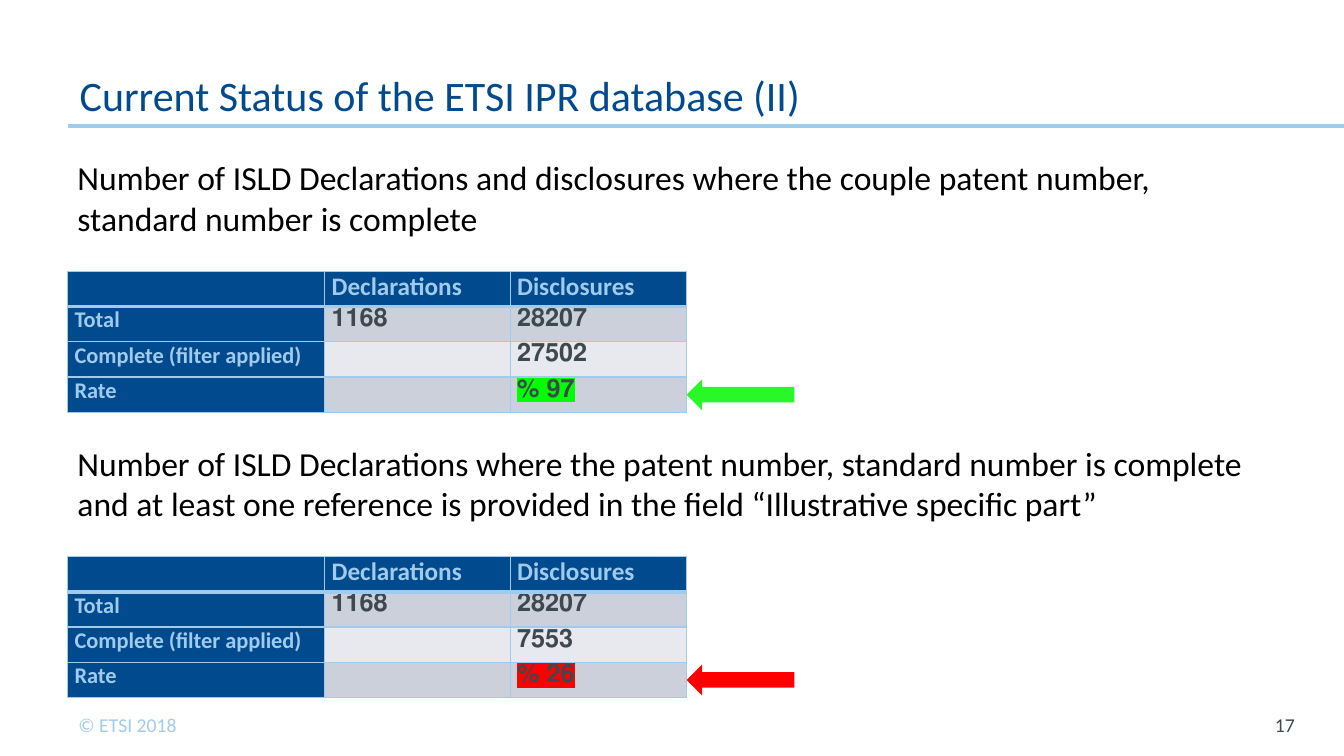
"""Build the slide on the current status of the ETSI IPR database."""
import dataclasses

import lxml.etree
import pptx
import pptx.dml.color
import pptx.enum.shapes
import pptx.enum.text
import pptx.oxml.ns
import pptx.util

Inches = pptx.util.Inches
Align = pptx.enum.text.PP_ALIGN
Anchor = pptx.enum.text.MSO_ANCHOR


@dataclasses.dataclass(frozen=True)
class Theme:
    """Colours, typeface and type sizes of the slide."""
    font: str = "Calibri"
    navy: str = "004A8D"
    sky: str = "A0CBED"
    slate: str = "3E484F"
    black: str = "000000"
    bands: tuple = ("CCD0DB", "E7E9EE")
    green_mark: str = "00FF00"
    green_arrow: str = "28F828"
    red: str = "FF0000"
    title_size: int = 30
    body_size: int = 24
    cell_size: int = 18
    label_size: int = 16
    footer_size: int = 14


def rgb(colour):
    """Turn a hex string into a colour."""
    return pptx.dml.color.RGBColor.from_string(colour)


def add_colour(parent, tag, colour):
    """Append an element that holds a colour."""
    holder = lxml.etree.SubElement(parent, pptx.oxml.ns.qn(tag))
    lxml.etree.SubElement(holder, pptx.oxml.ns.qn("a:srgbClr"), val=colour)


class SlideBuilder:
    """Draw styled elements on one slide."""

    def __init__(self, presentation, theme):
        """Add a title-only slide."""
        self.theme = theme
        self.slide = presentation.slides.add_slide(presentation.slide_layouts[5])

    def style(self, paragraph, size, colour, bold=False):
        """Set the font of a paragraph."""
        font = paragraph.font
        font.name, font.size, font.bold = self.theme.font, pptx.util.Pt(size), bold
        font.color.rgb = rgb(colour)

    def title(self, text, left, top, width, height):
        """Place and fill the title."""
        title = self.slide.shapes.title
        title.left, title.top = Inches(left), Inches(top)
        title.width, title.height = Inches(width), Inches(height)
        frame = title.text_frame
        frame.text = text
        frame.auto_size = pptx.enum.text.MSO_AUTO_SIZE.NONE
        frame.vertical_anchor = Anchor.BOTTOM
        frame.margin_left = frame.margin_right = Inches(0.12)
        frame.margin_top = frame.margin_bottom = Inches(0.06)
        paragraph = frame.paragraphs[0]
        paragraph.alignment = Align.LEFT
        paragraph.line_spacing = pptx.util.Pt(self.theme.title_size)
        self.style(paragraph, self.theme.title_size, self.theme.navy)

    def text(self, text, left, top, width, height, size, colour,
             align=Align.LEFT, anchor=Anchor.TOP):
        """Add a text box with one paragraph per line of text."""
        box = self.slide.shapes.add_textbox(
            Inches(left), Inches(top), Inches(width), Inches(height))
        frame = box.text_frame
        frame.word_wrap = True
        frame.vertical_anchor = anchor
        frame.text = text
        for paragraph in frame.paragraphs:
            paragraph.alignment = align
            self.style(paragraph, size, colour)

    def rule(self, left, right, top):
        """Add the horizontal line under the title."""
        line = self.slide.shapes.add_connector(
            pptx.enum.shapes.MSO_CONNECTOR.STRAIGHT,
            Inches(left), Inches(top), Inches(right), Inches(top))
        line.line.color.rgb = rgb(self.theme.sky)
        line.line.width = pptx.util.Pt(2.25)
        lxml.etree.SubElement(line._element.spPr, pptx.oxml.ns.qn("a:effectLst"))

    def arrow(self, left, top, width, height, colour):
        """Add an arrow that points left."""
        arrow = self.slide.shapes.add_shape(
            pptx.enum.shapes.MSO_SHAPE.RIGHT_ARROW,
            Inches(left), Inches(top), Inches(width), Inches(height))
        arrow.rotation = 180
        arrow.shadow.inherit = False
        arrow.fill.solid()
        arrow.fill.fore_color.rgb = rgb(colour)
        arrow.line.fill.background()

    def borders(self, cell, row):
        """Draw the cell borders, thick below the header row."""
        properties = cell._tc.get_or_add_tcPr()
        thick_side = {0: "B", 1: "T"}.get(row)
        for side in "LRTB":
            width = pptx.util.Pt(3 if side == thick_side else 1)
            line = lxml.etree.SubElement(
                properties, pptx.oxml.ns.qn(f"a:ln{side}"), w=str(int(width)))
            add_colour(line, "a:solidFill", self.theme.sky)

    def table(self, rows, left, top, widths, row_height, mark):
        """Add a table and highlight its last value."""
        theme = self.theme
        table = self.slide.shapes.add_table(
            len(rows), len(widths), Inches(left), Inches(top),
            Inches(sum(widths)), Inches(row_height * len(rows))).table
        for column, width in zip(table.columns, widths):
            column.width = Inches(width)
        for row, values in enumerate(rows):
            table.rows[row].height = Inches(row_height)
            for column, value in enumerate(values):
                cell = table.cell(row, column)
                heading = row == 0 or column == 0
                self.borders(cell, row)
                cell.fill.solid()
                cell.fill.fore_color.rgb = rgb(
                    theme.navy if heading else theme.bands[(row - 1) % 2])
                cell.margin_left = cell.margin_right = Inches(0.07)
                cell.margin_top = cell.margin_bottom = 0
                cell.text = value
                paragraph = cell.text_frame.paragraphs[0]
                paragraph.alignment = Align.LEFT
                if not heading:
                    paragraph._p.get_or_add_pPr().set("rtl", "1")
                label = column == 0 and row > 0
                self.style(paragraph, theme.label_size if label else theme.cell_size,
                           theme.sky if heading else theme.slate, bold=True)
        add_colour(paragraph.runs[0]._r.get_or_add_rPr(), "a:highlight", mark)


def main():
    """Build and save the presentation."""
    theme = Theme()
    presentation = pptx.Presentation()
    presentation.slide_width, presentation.slide_height = Inches(13.33), Inches(7.5)
    builder = SlideBuilder(presentation, theme)
    left = 0.67
    widths = (2.55, 1.84, 1.75)

    builder.rule(left, 13.33, 1.25)
    builder.text("© ETSI 2018", 0.68, 7.02, 1.34, 0.34, theme.footer_size, theme.sky)
    builder.text("17", 12.25, 6.99, 0.69, 0.4, theme.footer_size, theme.slate,
                 Align.RIGHT, Anchor.MIDDLE)
    builder.title("Current Status of the ETSI IPR database (II)", left, 0.3, 10.42, 0.95)

    sections = (
        (1.51, "Number of ISLD Declarations and disclosures where the couple patent number,\n"
               "standard number is complete",
         "27502", "97 %", theme.green_mark, theme.green_arrow),
        (4.34, "Number of ISLD Declarations where the patent number, standard number is complete "
               "and at least one reference is provided in the field “Illustrative specific part”",
         "7553", "26 %", theme.red, theme.red),
    )
    for top, statement, complete, rate, mark, arrow_colour in sections:
        builder.text(statement, left, top, 12.16, 0.91, theme.body_size, theme.black)
        rows = (
            ("", "Declarations", "Disclosures"),
            ("Total", "1168", "28207"),
            ("Complete (filter applied)", "", complete),
            ("Rate", "", rate),
        )
        builder.table(rows, left, top + 1.18, widths, 0.35, mark)
        builder.arrow(left + sum(widths), top + 2.25, 1.07, 0.31, arrow_colour)

    presentation.save("out.pptx")


if __name__ == "__main__":
    main()
